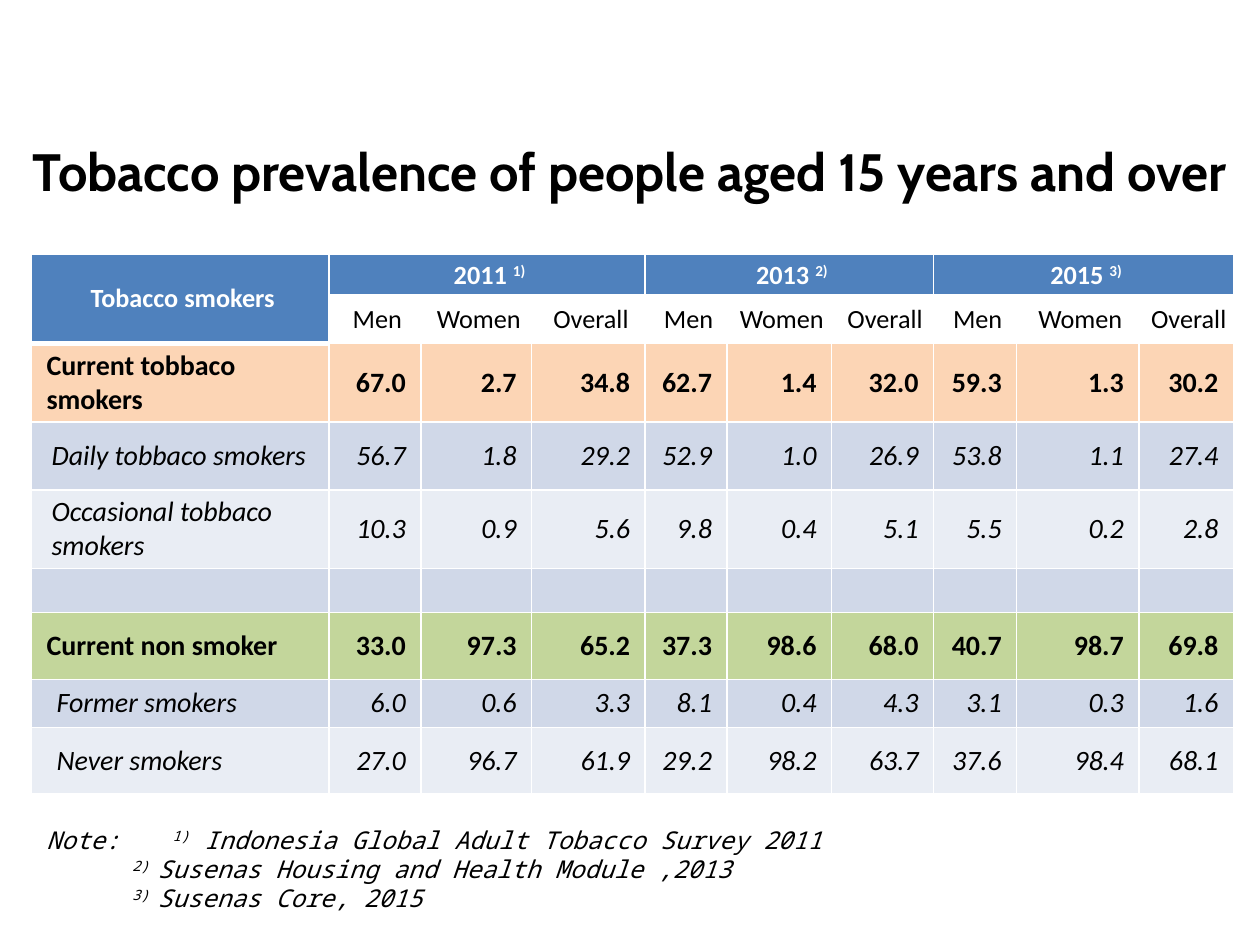
import pptx
import pptx.dml.color
import pptx.enum.text
import pptx.oxml
import pptx.oxml.ns
import pptx.util
from dataclasses import dataclass

Inches, Pt = pptx.util.Inches, pptx.util.Pt
ALIGN = pptx.enum.text.PP_ALIGN
MIDDLE = pptx.enum.text.MSO_ANCHOR.MIDDLE
NS = pptx.oxml.ns.nsdecls("a")


@dataclass(frozen=True)
class Theme:
    title_font: str = "Cabin"
    table_font: str = "Calibri"
    note_font: str = "Noto Sans Mono"
    title_size: int = 30
    head_size: int = 15
    body_size: int = 16
    note_size: int = 14
    black: str = "000000"
    white: str = "FFFFFF"
    blue: str = "4F81BD"
    peach: str = "FCD5B5"
    green: str = "C3D69B"
    band_dark: str = "D0D8E8"
    band_light: str = "E9EDF4"


THEME = Theme()
COLUMNS = [2.36, 0.73, 0.88, 0.9, 0.65, 0.83, 0.81, 0.66, 0.97, 0.75]
ROWS = [0.33, 0.37, 0.61, 0.54, 0.61, 0.35, 0.53, 0.38, 0.53]
YEARS = [("2011 ", "1)"), ("2013 ", "2)"), ("2015 ", "3)")]
GROUPS = ["Men", "Women", "Overall"]

# label, fill, label indent, is a total row, values
SMOKERS = [
    ("Current tobbaco smokers", THEME.peach, 0.08, True,
     "67.0 2.7 34.8 62.7 1.4 32.0 59.3 1.3 30.2"),
    ("Daily tobbaco smokers", THEME.band_dark, 0.12, False,
     "56.7 1.8 29.2 52.9 1.0 26.9 53.8 1.1 27.4"),
    ("Occasional tobbaco smokers", THEME.band_light, 0.12, False,
     "10.3 0.9 5.6 9.8 0.4 5.1 5.5 0.2 2.8"),
    ("", THEME.band_dark, 0, False, ""),
    ("Current non smoker", THEME.green, 0.08, True,
     "33.0 97.3 65.2 37.3 98.6 68.0 40.7 98.7 69.8"),
    ("Former smokers", THEME.band_dark, 0.16, False,
     "6.0 0.6 3.3 8.1 0.4 4.3 3.1 0.3 1.6"),
    ("Never smokers", THEME.band_light, 0.16, False,
     "27.0 96.7 61.9 29.2 98.2 63.7 37.6 98.4 68.1"),
]
# runs of each line (odd runs are raised) and its tab stop
NOTES = [
    (("Note:\t", "1)", " Indonesia Global Adult Tobacco Survey 2011"), 1.0),
    (("\t", "2) ", "Susenas Housing and Health Module ,2013"), 0.68),
    (("\t", "3) ", "Susenas Core, 2015"), 0.68),
]


def write(paragraph, runs, font, size, color=THEME.black, bold=False,
          italic=False, align=ALIGN.LEFT, indent=0, tab=None):
    """Fill a paragraph with runs; every second run is superscript."""
    paragraph.alignment = align
    properties = paragraph._p.get_or_add_pPr()
    if indent:
        properties.set("marL", str(Inches(indent)))
    if tab:
        properties.append(pptx.oxml.parse_xml(
            f'<a:tabLst {NS}><a:tab pos="{Inches(tab)}" algn="l"/></a:tabLst>'))
    for number, text in enumerate(runs):
        run = paragraph.add_run()
        run.text = text
        run.font.name, run.font.size = font, Pt(size)
        run.font.bold, run.font.italic = bold, italic
        run.font.color.rgb = pptx.dml.color.RGBColor.from_string(color)
        if number % 2:
            run._r.get_or_add_rPr().set("baseline", "30000")
    if not runs:
        paragraph._p.append(pptx.oxml.parse_xml(
            f'<a:endParaRPr {NS} sz="{size * 100}"/>'))


def style_cell(cell, fill, left=0.04, right=0.04, bottom_line=1):
    """Give a cell its white borders, fill, anchor and margins."""
    properties = cell._tc.get_or_add_tcPr()
    for side, width in (("L", 1), ("R", 1), ("T", 1), ("B", bottom_line)):
        properties.append(pptx.oxml.parse_xml(
            f'<a:ln{side} {NS} w="{Pt(width)}"><a:solidFill>'
            f'<a:srgbClr val="{THEME.white}"/></a:solidFill></a:ln{side}>'))
    cell.fill.solid()
    cell.fill.fore_color.rgb = pptx.dml.color.RGBColor.from_string(fill)
    cell.vertical_anchor = MIDDLE
    cell.margin_left, cell.margin_right = Inches(left), Inches(right)
    cell.margin_top = cell.margin_bottom = Inches(0.04)


def add_title(slide, left, top, width, height):
    title = slide.shapes.title
    title.left, title.top = Inches(left), Inches(top)
    title.width, title.height = Inches(width), Inches(height)
    write(title.text_frame.paragraphs[0],
          ["Tobacco prevalence of people aged 15 years and over"],
          THEME.title_font, THEME.title_size, bold=True, align=ALIGN.CENTER)


def fill_header(table):
    def head(row, column, runs, fill, color, bold, line):
        cell = table.cell(row, column)
        style_cell(cell, fill, left=0.08, bottom_line=line)
        write(cell.text_frame.paragraphs[0], runs, THEME.table_font,
              THEME.head_size, color=color, bold=bold, align=ALIGN.CENTER)

    # Top row: the row label and one year for every three columns
    for column in range(len(COLUMNS)):
        year, place = divmod(column - 1, len(GROUPS))
        runs = ["Tobacco smokers"] if column == 0 else YEARS[year]
        head(0, column, runs if column == 0 or place == 0 else [],
             THEME.blue, THEME.white, True, 3)
    # Second row: the groups within each year
    head(1, 0, [], THEME.blue, THEME.white, True, 3)
    for column in range(1, len(COLUMNS)):
        head(1, column, [GROUPS[(column - 1) % len(GROUPS)]],
             THEME.white, THEME.black, False, 1)

    table.cell(0, 0).merge(table.cell(1, 0))
    for column in range(1, len(COLUMNS), len(GROUPS)):
        table.cell(0, column).merge(table.cell(0, column + len(GROUPS) - 1))


def fill_body(table):
    for row, (label, fill, indent, total, values) in enumerate(SMOKERS, 2):
        look = dict(font=THEME.table_font, size=THEME.body_size,
                    bold=total, italic=not total)
        texts = [label] + (values.split() or [""] * (len(COLUMNS) - 1))
        for column, text in enumerate(texts):
            cell = table.cell(row, column)
            style_cell(cell, fill, right=0.12 if column else 0.08)
            write(cell.text_frame.paragraphs[0], [text] if text else [],
                  align=ALIGN.RIGHT if column else ALIGN.LEFT,
                  indent=0 if column else indent, **look)


def add_prevalence_table(slide, left, top, width, height):
    table = slide.shapes.add_table(
        len(ROWS), len(COLUMNS), Inches(left), Inches(top),
        Inches(width), Inches(height)).table
    for column, size in zip(table.columns, COLUMNS):
        column.width = Inches(size)
    for row, size in zip(table.rows, ROWS):
        row.height = Inches(size)
    fill_header(table)
    fill_body(table)


def add_notes(slide, left, top, width, height):
    notes = slide.shapes.add_textbox(
        Inches(left), Inches(top), Inches(width), Inches(height)).text_frame
    notes.word_wrap = True
    notes.vertical_anchor = MIDDLE
    for number, (runs, tab) in enumerate(NOTES):
        line = notes.add_paragraph() if number else notes.paragraphs[0]
        write(line, runs, THEME.note_font, THEME.note_size, italic=True, tab=tab)


def main():
    deck = pptx.Presentation()
    deck.slide_width, deck.slide_height = Inches(10), Inches(7.5)
    slide = deck.slides.add_slide(deck.slide_layouts[5])
    add_title(slide, 0, 1.05, 10, 0.61)
    add_prevalence_table(slide, 0.25, 2.02, sum(COLUMNS), sum(ROWS))
    add_notes(slide, 0.27, 6.46, 8.27, 0.87)
    deck.save("out.pptx")


if __name__ == "__main__":
    main()
